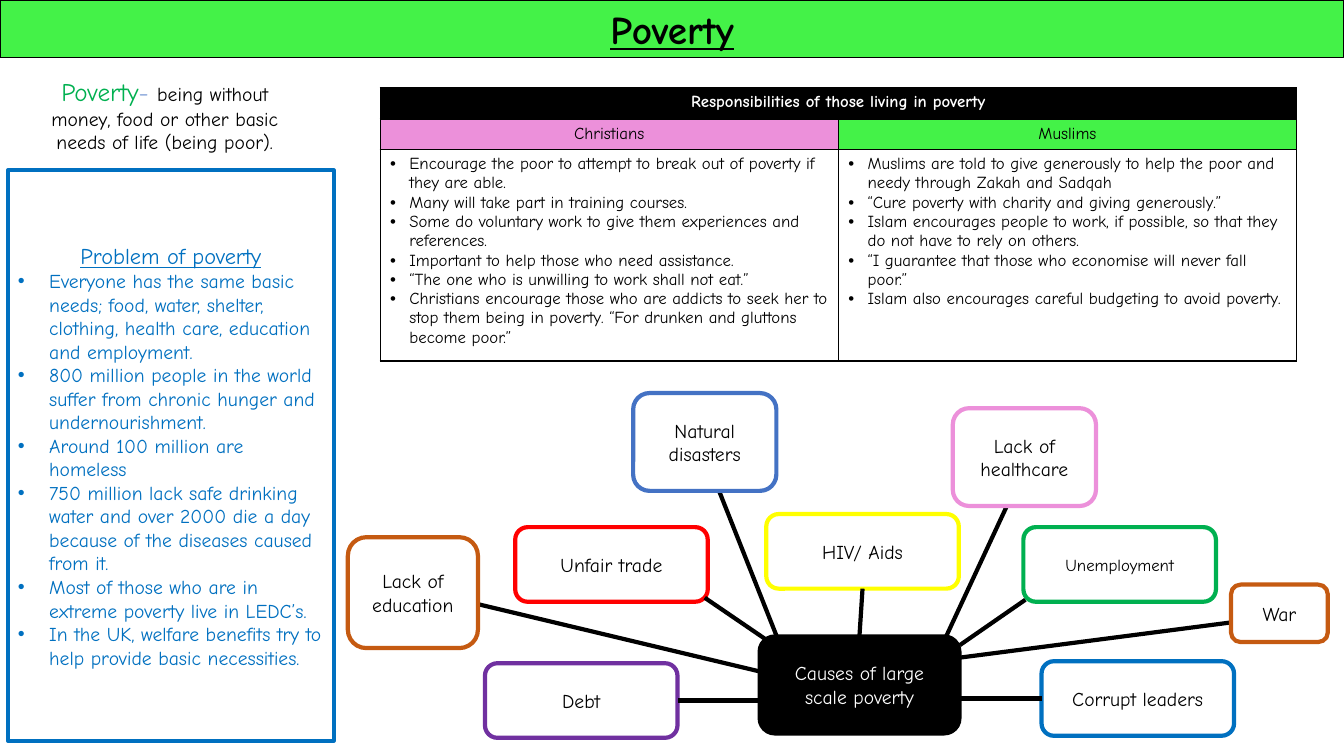
import dataclasses

import pptx
import pptx.dml.color
import pptx.enum.shapes
import pptx.enum.text
import pptx.oxml
import pptx.oxml.ns
import pptx.util

CENTER = pptx.enum.text.PP_ALIGN.CENTER
LEFT = pptx.enum.text.PP_ALIGN.LEFT
MIDDLE = pptx.enum.text.MSO_ANCHOR.MIDDLE
TOP = pptx.enum.text.MSO_ANCHOR.TOP
RECTANGLE = pptx.enum.shapes.MSO_SHAPE.RECTANGLE
ROUNDED = pptx.enum.shapes.MSO_SHAPE.ROUNDED_RECTANGLE
SIDE_TOP, SIDE_LEFT, SIDE_BOTTOM, SIDE_RIGHT = range(4)


@dataclasses.dataclass(frozen=True)
class Theme:
    font: str = "Comic Neue"
    black: str = "000000"
    white: str = "FFFFFF"
    lime: str = "44F248"
    green: str = "00B050"
    blue: str = "0070C0"
    pale_blue: str = "8FAADC"
    royal: str = "4472C4"
    pink: str = "EC90DA"
    purple: str = "7030A0"
    red: str = "FF0000"
    yellow: str = "FFFF00"
    brown: str = "C55A11"
    title_size: int = 28
    term_size: int = 18
    heading_size: int = 16
    body_size: int = 14
    small_size: int = 12
    thick: float = 3
    thin: float = 1


@dataclasses.dataclass
class Run:
    text: str
    size: int
    color: str
    bold: bool = False
    underline: bool = False


@dataclasses.dataclass
class Paragraph:
    runs: list
    alignment: object = CENTER
    indent: float = 0


def add_xml(parent, xml):
    parent.append(pptx.oxml.parse_xml(xml.replace(">", " " + pptx.oxml.ns.nsdecls("a") + ">", 1)))


def bullets(texts, size, color, indent):
    return [Paragraph([Run(text, size, color)], LEFT, indent) for text in texts]


def rgb(color):
    return pptx.dml.color.RGBColor.from_string(color)


@dataclasses.dataclass
class Board:
    """Draws on one slide; lengths are cells of a grid 133.3 columns by 75 rows."""
    slide: object
    theme: Theme
    cell: int = pptx.util.Inches(0.1)

    def grid(self, *lengths):
        return [round(length * self.cell) for length in lengths]

    def set_text(self, frame, paragraphs, anchor=MIDDLE):
        frame.word_wrap = True
        frame.vertical_anchor = anchor
        for index, content in enumerate(paragraphs):
            paragraph = frame.add_paragraph() if index else frame.paragraphs[0]
            paragraph.alignment = content.alignment
            if content.indent:
                properties = paragraph._p.get_or_add_pPr()
                indent, = self.grid(content.indent)
                properties.set("marL", str(indent))
                properties.set("indent", str(-indent))
                add_xml(properties, '<a:buFont typeface="Arial"></a:buFont>')
                add_xml(properties, '<a:buChar char="•"></a:buChar>')
            for content_run in content.runs:
                run = paragraph.add_run()
                run.text = content_run.text
                run.font.name = self.theme.font
                run.font.size = pptx.util.Pt(content_run.size)
                run.font.bold = content_run.bold
                run.font.underline = content_run.underline
                run.font.color.rgb = rgb(content_run.color)

    def paint(self, shape, fill, line, width):
        shape.fill.solid()
        shape.fill.fore_color.rgb = rgb(fill)
        shape.line.color.rgb = rgb(line)
        shape.line.width = pptx.util.Pt(width)

    def title(self, text, box, fill):
        title = self.slide.shapes.title
        title.left, title.top, title.width, title.height = self.grid(*box)
        self.paint(title, fill, self.theme.black, 0.75)
        title.text_frame.auto_size = pptx.enum.text.MSO_AUTO_SIZE.NONE
        self.set_text(title.text_frame, [Paragraph(
            [Run(text, self.theme.title_size, self.theme.black, bold=True, underline=True)])])

    def text(self, box, paragraphs):
        self.set_text(self.slide.shapes.add_textbox(*self.grid(*box)).text_frame, paragraphs, TOP)

    def box(self, kind, box, paragraphs, fill, line, width):
        shape = self.slide.shapes.add_shape(kind, *self.grid(*box))
        shape.shadow.inherit = False
        self.paint(shape, fill, line, width)
        self.set_text(shape.text_frame, paragraphs)
        return shape

    def cause(self, text, box, color, size=None):
        label = Paragraph([Run(text, size or self.theme.body_size, self.theme.black)])
        return self.box(ROUNDED, box, [label], self.theme.white, color, self.theme.thick)

    def link(self, *ends):
        connector = self.slide.shapes.add_connector(
            pptx.enum.shapes.MSO_CONNECTOR.STRAIGHT, *self.grid(*ends))
        connector.line.color.rgb = rgb(self.theme.black)
        connector.line.width = pptx.util.Pt(self.theme.thick)
        add_xml(connector._element.spPr, "<a:effectLst></a:effectLst>")
        return connector

    def table(self, box, row_heights, rows):
        """Each row is a list of (paragraphs, fill); a row with one cell spans all columns."""
        count = max(map(len, rows))
        table = self.slide.shapes.add_table(len(rows), count, *self.grid(*box)).table
        for column in table.columns:
            column.width = self.grid(box[2] / count)[0]
        for row_index, (height, row) in enumerate(zip(row_heights, rows)):
            table.rows[row_index].height = self.grid(height)[0]
            if len(row) < count:
                table.cell(row_index, 0).merge(table.cell(row_index, count - 1))
            for column_index in range(count):
                cell = table.cell(row_index, column_index)
                for side in "LRTB":
                    add_xml(cell._tc.get_or_add_tcPr(),
                            f'<a:ln{side} w="{pptx.util.Pt(self.theme.thin)}"><a:solidFill>'
                            f'<a:srgbClr val="{self.theme.black}"/></a:solidFill></a:ln{side}>')
                if column_index < len(row):
                    paragraphs, fill = row[column_index]
                    self.set_text(cell.text_frame, paragraphs)
                    cell.vertical_anchor = TOP
                    cell.fill.solid()
                    cell.fill.fore_color.rgb = rgb(fill)


def draw_definition_and_problem(board, theme):
    board.text((1.9, 7.1, 28.9, 8.8), [Paragraph([
        Run("Poverty", theme.term_size, theme.green),
        Run("- ", theme.term_size, theme.pale_blue),
        Run("being without money, food or other basic needs of life (being poor).",
            theme.body_size, theme.black)])])
    heading = Paragraph([Run("Problem of poverty", theme.heading_size, theme.blue, underline=True)])
    problems = [
        "Everyone has the same basic needs; food, water, shelter, clothing, health care, "
        "education and employment.",
        "800 million people in the world suffer from chronic hunger and undernourishment.",
        "Around 100 million are homeless",
        "750 million lack safe drinking water and over 2000 die a day because of the diseases "
        "caused from it.",
        "Most of those who are in extreme poverty live in LEDC’s.",
        "In the UK, welfare benefits try to help provide basic necessities."]
    board.box(RECTANGLE, (0.8, 16.9, 32.3, 56.6),
              [heading] + bullets(problems, theme.body_size, theme.blue, 3.1),
              theme.white, theme.blue, theme.thick)


def draw_responsibilities(board, theme):
    def heading(text, color, bold=False):
        return [Paragraph([Run(text, theme.small_size, color, bold)])]

    def duties(*texts):
        return bullets(texts, theme.small_size, theme.black, 1.9), theme.white

    board.table((37.7, 8.7, 90.9, 27.2), (3.1, 3, 21), [
        [(heading("Responsibilities of those living in poverty", theme.white, True), theme.black)],
        [(heading("Christians", theme.black), theme.pink),
         (heading("Muslims", theme.black), theme.lime)],
        [duties("Encourage the poor to attempt to break out of poverty if they are able.",
                "Many will take part in training courses.",
                "Some do voluntary work to give them experiences and references.",
                "Important to help those who need assistance.",
                "“The one who is unwilling to work shall not eat.”",
                "Christians encourage those who are addicts to seek her to stop them being in "
                "poverty. “For drunken and gluttons become poor.”"),
         duties("Muslims are told to give generously to help the poor and needy through Zakah "
                "and Sadqah",
                "“Cure poverty with charity and giving generously.”",
                "Islam encourages people to work, if possible, so that they do not have to rely "
                "on others.",
                "“I guarantee that those who economise will never fall poor.”",
                "Islam also encourages careful budgeting to avoid poverty.")]])


def draw_causes(board, theme):
    hub_label = Paragraph([Run("Causes of large scale poverty", theme.body_size, theme.white)])
    hub = board.box(ROUNDED, (75.2, 63, 20.1, 9.9), [hub_label],
                    theme.black, theme.black, theme.thin)
    wide = (19.1, 7.4)
    debt = board.cause("Debt", (48.1, 65.8, *wide), theme.purple)
    board.cause("Unfair trade", (51.1, 52.3, *wide), theme.red)
    board.cause("Unemployment", (101.5, 52.3, *wide), theme.green, theme.small_size)
    corrupt = board.cause("Corrupt leaders", (103.3, 65.6, *wide), theme.blue)
    hiv = board.cause("HIV/ Aids", (76, 51, *wide), theme.yellow)

    hiv_link = board.link(85.3, 63, 85.6, 58.4)
    hiv_link.begin_connect(hub, SIDE_TOP)
    hiv_link.end_connect(hiv, SIDE_BOTTOM)
    board.link(95.2, 69.3, 103.3, 69.3).end_connect(corrupt, SIDE_LEFT)
    board.link(75.4, 69.5, 67.2, 69.5).end_connect(debt, SIDE_RIGHT)
    for ends in [(95.2, 64, 101.7, 59.5), (69.9, 59.3, 76.2, 63.6), (46.4, 59.7, 75.7, 66.7),
                 (71, 47.9, 77.9, 65.3), (93.3, 64.3, 100, 49.9), (93.2, 65.5, 122.5, 61.7)]:
        board.link(*ends)

    board.cause("Lack of education", (34.5, 53.3, 12.9, 11), theme.brown)
    board.cause("Natural disasters", (62.8, 39, 14.2, 9.7), theme.royal)
    board.cause("Lack of healthcare", (94.5, 40.5, 14.2, 9.7), theme.pink)
    board.cause("War", (122.1, 58, 9.6, 5.7), theme.brown)


def main():
    presentation = pptx.Presentation()
    presentation.slide_width = pptx.util.Inches(13.33)
    presentation.slide_height = pptx.util.Inches(7.5)
    theme = Theme()
    board = Board(presentation.slides.add_slide(presentation.slide_layouts[5]), theme)
    board.title("Poverty", (0, 0, 133.3, 5.7), theme.lime)
    draw_definition_and_problem(board, theme)
    draw_causes(board, theme)
    draw_responsibilities(board, theme)
    presentation.save("out.pptx")


if __name__ == "__main__":
    main()
